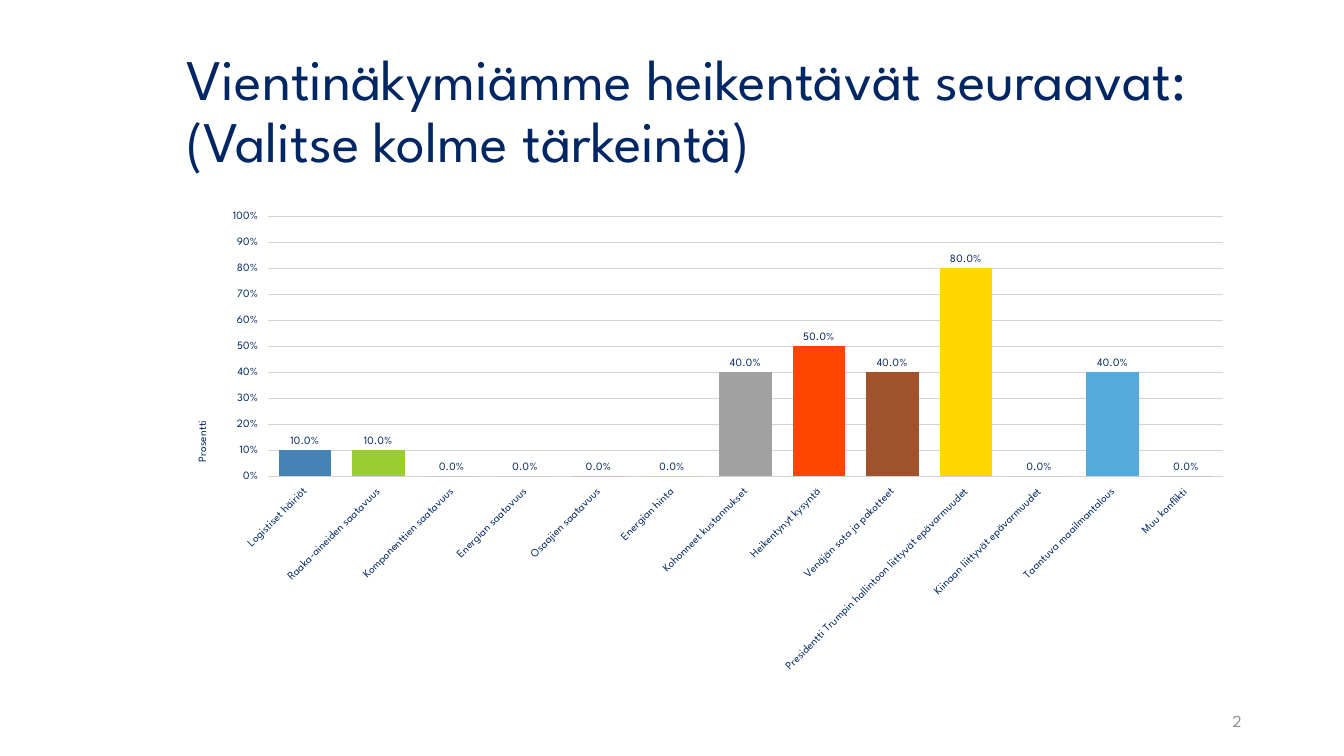
import pptx
import pptx.chart.data
import pptx.dml.color
import pptx.enum.chart
import pptx.enum.text
import pptx.util

COLORS = {"navy": "002663", "muted": "8C8E9F", "grid": "D3D3D3"}
FONT = "League Spartan"
EMU_PER_PX = 9525  # 96 px to the inch

# Answer option, share of respondents, bar colour
ANSWERS = [
    ("Logistiset häiriöt", 0.1, "4682B4"),
    ("Raaka-aineiden saatavuus", 0.1, "9ACD32"),
    ("Komponenttien saatavuus", 0, "708090"),
    ("Energian saatavuus", 0, "CD853F"),
    ("Osaajien saatavuus", 0, "B22222"),
    ("Energian hinta", 0, "FFA500"),
    ("Kohonneet kustannukset", 0.4, "A1A1A1"),
    ("Heikentynyt kysyntä", 0.5, "FF4500"),
    ("Venäjän sota ja pakotteet", 0.4, "A0522D"),
    ("Presidentti Trumpin hallintoon liittyvät epävarmuudet", 0.8, "FFD700"),
    ("Kiinaan liittyvät epävarmuudet", 0, "3CB371"),
    ("Taantuva maailmantalous", 0.4, "54A9DD"),
    ("Muu konflikti", 0, "6A5ACD"),
]


def px(length):
    return pptx.util.Emu(length * EMU_PER_PX)


def rgb(hex_color):
    return pptx.dml.color.RGBColor.from_string(hex_color)


def apply(target, values):
    for name, value in values.items():
        setattr(target, name, value)


class SurveySlide:
    def __init__(self, deck):
        self.slide = deck.slides.add_slide(deck.slide_layouts[6])

    def style_font(self, font, size, color="navy"):
        apply(font, {"name": FONT, "size": pptx.util.Pt(size), "bold": False})
        font.color.rgb = rgb(COLORS[color])

    def text(self, box, wording, size, color, paragraph_format):
        frame = self.slide.shapes.add_textbox(*map(px, box)).text_frame
        apply(frame, {"word_wrap": True,
                      "vertical_anchor": pptx.enum.text.MSO_ANCHOR.MIDDLE})
        paragraph = frame.paragraphs[0]
        apply(paragraph, paragraph_format)
        run = paragraph.add_run()
        run.text = wording
        self.style_font(run.font, size, color)

    def column_chart(self, box, answers, value_title):
        options, shares, fills = zip(*answers)
        data = pptx.chart.data.CategoryChartData()
        data.categories = options
        data.add_series("Series 1", shares)
        chart = self.slide.shapes.add_chart(
            pptx.enum.chart.XL_CHART_TYPE.COLUMN_CLUSTERED,
            *map(px, box), data).chart
        apply(chart, {"has_legend": False, "has_title": False})
        self.style_font(chart.font, 18)

        # Bars and their labels
        plot = chart.plots[0]
        apply(plot, {"gap_width": 40, "overlap": -2,
                     "vary_by_categories": False, "has_data_labels": True})
        apply(plot.data_labels, {
            "number_format": "0.0%", "number_format_is_linked": False,
            "show_value": True,
            "position": pptx.enum.chart.XL_LABEL_POSITION.OUTSIDE_END})
        self.style_font(plot.data_labels.font, 8)
        bars = plot.series[0]
        bars.format.fill.solid()
        bars.format.fill.fore_color.rgb = rgb(fills[0])
        for index, color in enumerate(fills):
            fill = bars.points[index].format.fill
            fill.solid()
            fill.fore_color.rgb = rgb(color)

        # Axes
        options_axis, share_axis = chart.category_axis, chart.value_axis
        for axis in (options_axis, share_axis):
            axis.format.line.fill.background()
            self.style_font(axis.tick_labels.font, 8)
        slanted = options_axis._element.find(".//{*}txPr/{*}bodyPr")
        slanted.set("rot", "-2700000")
        slanted.set("vert", "horz")
        apply(share_axis, {"minimum_scale": 0, "maximum_scale": 1,
                           "major_unit": 0.1, "has_major_gridlines": True})
        apply(share_axis.tick_labels, {"number_format": "0%",
                                       "number_format_is_linked": False})
        grid = share_axis.major_gridlines.format.line
        grid.color.rgb = rgb(COLORS["grid"])
        grid.width = pptx.util.Pt(1)

        # Upright title of the value axis
        title_frame = share_axis.axis_title.text_frame
        run = title_frame.paragraphs[0].add_run()
        run.text = value_title
        self.style_font(run.font, 8)
        upright = share_axis._element.find(".//{*}title//{*}bodyPr")
        upright.set("rot", "-5400000")
        upright.set("vert", "horz")


def main():
    deck = pptx.Presentation()
    apply(deck, {"slide_width": px(1280), "slide_height": px(720)})
    survey = SurveySlide(deck)

    # Question
    survey.text((168, 38, 1017, 139),
                "Vientinäkymiämme heikentävät seuraavat: (Valitse kolme tärkeintä)",
                41, "navy", {"line_spacing": 0.9})
    # Results
    survey.column_chart((168, 192, 1017, 457), ANSWERS, "Prosentti")
    # Page number
    survey.text((904, 667, 288, 38), "2", 12, "muted",
                {"alignment": pptx.enum.text.PP_ALIGN.RIGHT,
                 "space_after": pptx.util.Pt(6)})
    deck.save("out.pptx")


if __name__ == "__main__":
    main()
